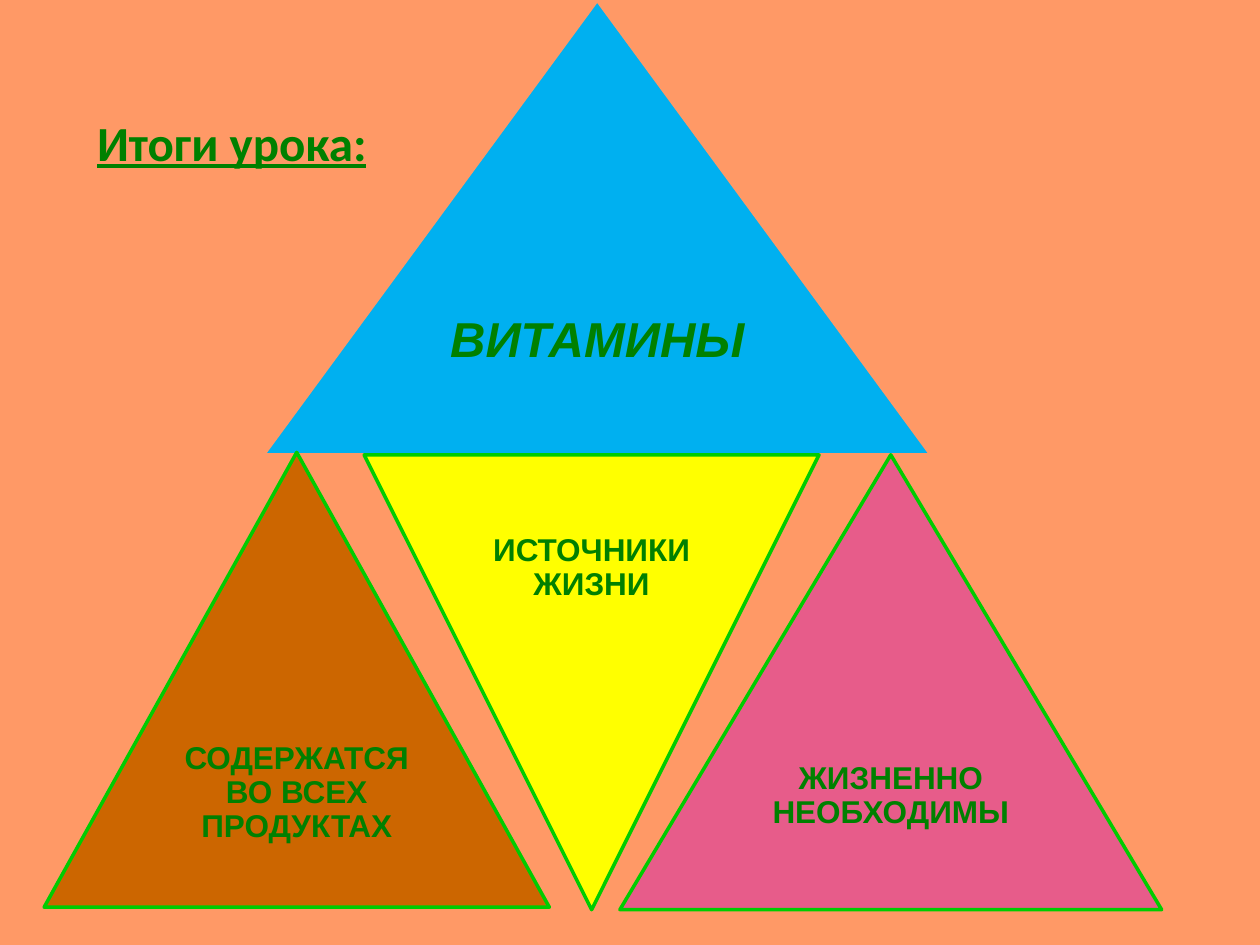
from pptx import Presentation
from pptx.dml.color import RGBColor
from pptx.enum.shapes import MSO_SHAPE
from pptx.enum.text import MSO_ANCHOR, MSO_AUTO_SIZE, PP_ALIGN
from pptx.util import Inches, Pt

TRIANGLE = MSO_SHAPE.ISOSCELES_TRIANGLE
MIDDLE, TOP = MSO_ANCHOR.MIDDLE, MSO_ANCHOR.TOP
CENTER, LEFT = PP_ALIGN.CENTER, PP_ALIGN.LEFT
FIT_SHAPE, NO_FIT = MSO_AUTO_SIZE.SHAPE_TO_FIT_TEXT, MSO_AUTO_SIZE.NONE

TITLE_ONLY = 5
HEIGHT = 3.61  # every triangle has the same height
COLORS = {
    "background": "FF9966",
    "text": "008000",
    "outline": "00CC00",
    "blue": "00B0F0",
    "brown": "CC6600",
    "yellow": "FFFF00",
    "pink": "E75C8A",
}


def color(name):
    return RGBColor.from_string(COLORS[name])


class PyramidSlide:
    def __init__(self, presentation):
        self.slide = presentation.slides.add_slide(presentation.slide_layouts[TITLE_ONLY])
        fill = self.slide.background.fill
        fill.solid()
        fill.fore_color.rgb = color("background")

    def set_text(self, shape, text, size, font_name, alignment):
        shape.text_frame.text = text
        paragraph = shape.text_frame.paragraphs[0]
        paragraph.alignment = alignment
        font = paragraph.runs[0].font
        font.name, font.size, font.bold = font_name, Pt(size), True
        font.color.rgb = color("text")
        return paragraph

    def title(self, text, left, top, width, height):
        shape = self.slide.shapes.title
        shape.left, shape.top = Inches(left), Inches(top)
        shape.width, shape.height = Inches(width), Inches(height)
        paragraph = self.set_text(shape, text, 28, "Calibri", LEFT)
        paragraph.runs[0].font.underline = True
        frame = shape.text_frame
        frame.word_wrap = False
        frame.auto_size = FIT_SHAPE
        frame.vertical_anchor = TOP

    def triangle(self, left, top, width, fill, outline="outline", inverted=False):
        shape = self.slide.shapes.add_shape(
            TRIANGLE, Inches(left), Inches(top), Inches(width), Inches(HEIGHT))
        shape.shadow.inherit = False
        shape.rotation = 180 if inverted else 0
        shape.fill.solid()
        shape.fill.fore_color.rgb = color(fill)
        shape.line.color.rgb = color(outline)
        shape.line.width = Pt(2)

    def label(self, text, left, top, width, size=18, inset=0.07, italic=False):
        box = self.slide.shapes.add_textbox(
            Inches(left), Inches(top), Inches(width), Inches(HEIGHT / 2))
        frame = box.text_frame
        frame.word_wrap = True
        frame.auto_size = NO_FIT
        frame.vertical_anchor = MIDDLE
        frame.margin_left = frame.margin_right = Inches(inset)
        frame.margin_top = frame.margin_bottom = Inches(inset)
        paragraph = self.set_text(box, text, size, "Arial", CENTER)
        paragraph.line_spacing = 0.9
        paragraph.runs[0].font.italic = italic

    def block(self, text, left, top, width, fill, outline="outline",
              inverted=False, **label_style):
        self.triangle(left, top, width, fill, outline, inverted)
        # The label fills the middle half of the width, in the wide half of the height
        label_top = top if inverted else top + HEIGHT / 2
        self.label(text, left + width / 4, label_top, width / 2, **label_style)


def main():
    presentation = Presentation()
    presentation.slide_width, presentation.slide_height = Inches(10), Inches(7.5)
    page = PyramidSlide(presentation)

    # Heading
    page.title("Итоги урока:", 0.67, 0.84, 2.36, 0.57)

    # Top of the pyramid
    page.block("ВИТАМИНЫ", 2.09, 0, 5.3, "blue", outline="background",
               size=28, inset=0.12, italic=True)

    # Bottom row
    page.block("СОДЕРЖАТСЯ ВО ВСЕХ ПРОДУКТАХ", 0.35, 3.59, 4.01, "brown")
    page.block("ИСТОЧНИКИ ЖИЗНИ", 2.89, HEIGHT, 3.61, "yellow", inverted=True)
    page.block("ЖИЗНЕННО НЕОБХОДИМЫ", 4.92, HEIGHT, 4.3, "pink")

    presentation.save("out.pptx")


if __name__ == "__main__":
    main()
